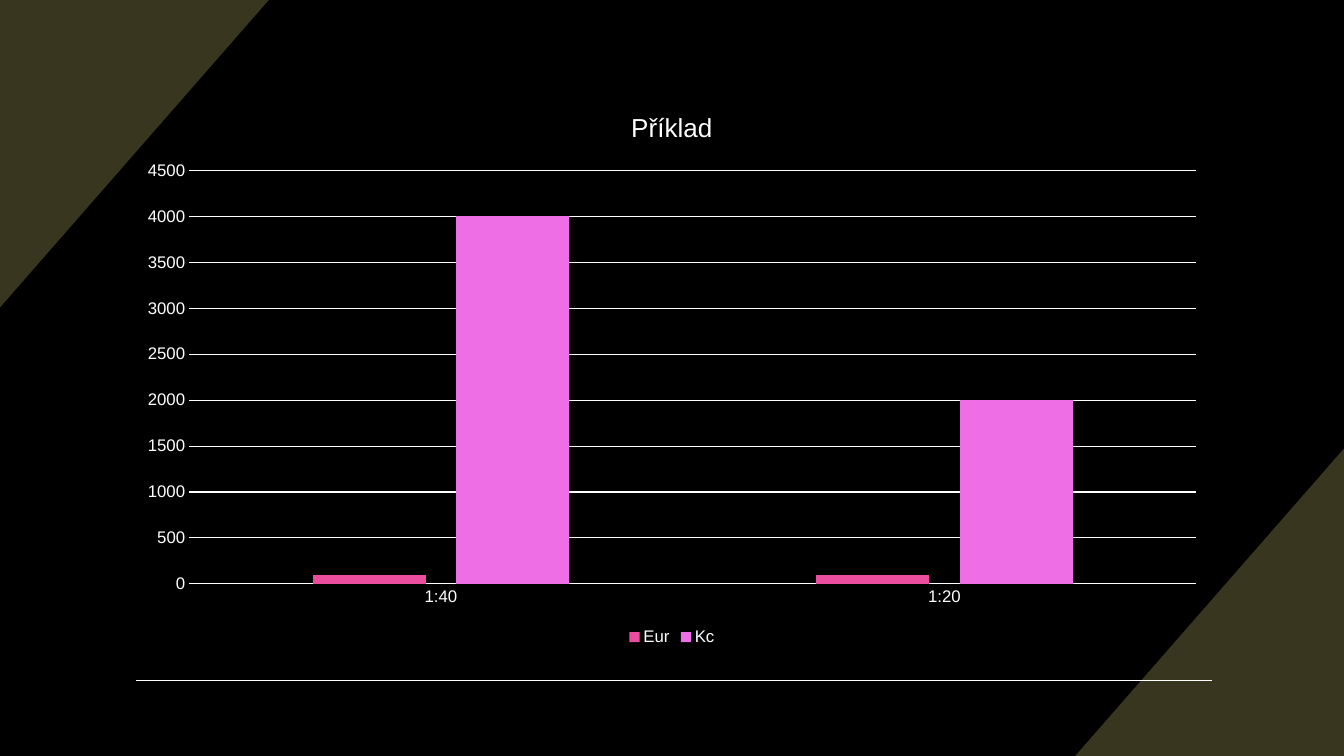
from pptx import Presentation
from pptx.chart.data import CategoryChartData
from pptx.dml.color import RGBColor
from pptx.enum import chart as kinds
from pptx.oxml.ns import qn
from pptx.util import Pt
from lxml import etree

HUES = {"back": "000000", "corner": "393620", "white": "FFFFFF",
        "Eur": "EB4E9E", "Kc": "EE6EE5"}
WIDE, HIGH = 960, 540


def hue(name):
    return RGBColor.from_string(HUES[name])


def style(font, size):
    font.name = "Arial"
    font.size = Pt(size)
    font.bold = False
    font.color.rgb = hue("white")


deck = Presentation()
deck.slide_width, deck.slide_height = Pt(WIDE), Pt(HIGH)
slide = deck.slides.add_slide(deck.slide_layouts[6])
slide.background.fill.solid()
slide.background.fill.fore_color.rgb = hue("back")

# Corner triangles, each with its legs along the slide edges
for x, y, side in ((WIDE, HIGH, -1), (0, 0, 1)):
    form = slide.shapes.build_freeform(Pt(x), Pt(y))
    form.add_line_segments([(Pt(x + side * 192), Pt(y)),
                            (Pt(x), Pt(y + side * 219.6))])
    corner = form.convert_to_shape()
    corner.shadow.inherit = False
    corner.fill.solid()
    corner.fill.fore_color.rgb = hue("corner")
    corner.line.fill.background()

rule = slide.shapes.add_connector(1, Pt(97.2), Pt(486), Pt(865.4), Pt(486))
rule.line.color.rgb = hue("white")
rule.line.width = Pt(1)
etree.SubElement(rule._element.spPr, qn("a:effectLst"))

data = CategoryChartData()
data.categories = ["1:40", "1:20"]
data.add_series("Eur", (100, 100))
data.add_series("Kc", (4000, 2000))
chart = slide.shapes.add_chart(
    kinds.XL_CHART_TYPE.COLUMN_CLUSTERED,
    Pt(90), Pt(63.4), Pt(780), Pt(401), data).chart
style(chart.font, 10)

chart.has_title = True
title = chart.chart_title.text_frame
title.text = "Příklad"
style(title.paragraphs[0].runs[0].font, 18.6)
chart.chart_title.include_in_layout = False

chart.has_legend = True
chart.legend.position = kinds.XL_LEGEND_POSITION.BOTTOM
chart.legend.include_in_layout = False
style(chart.legend.font, 12)

cats, vals = chart.category_axis, chart.value_axis
for axis in (cats, vals):
    axis.major_tick_mark = axis.minor_tick_mark = kinds.XL_TICK_MARK.NONE
    style(axis.tick_labels.font, 12)
vals.has_major_gridlines = True
vals.format.line.fill.background()
for line in (cats.format.line, vals.major_gridlines.format.line):
    line.color.rgb = hue("white")
    line.width = Pt(0.75)

plot = chart.plots[0]
plot.gap_width, plot.overlap = 219, -27
plot.vary_by_categories = False
for bars in plot.series:
    bars.format.fill.solid()
    bars.format.fill.fore_color.rgb = hue(bars.name)

deck.save("out.pptx")
